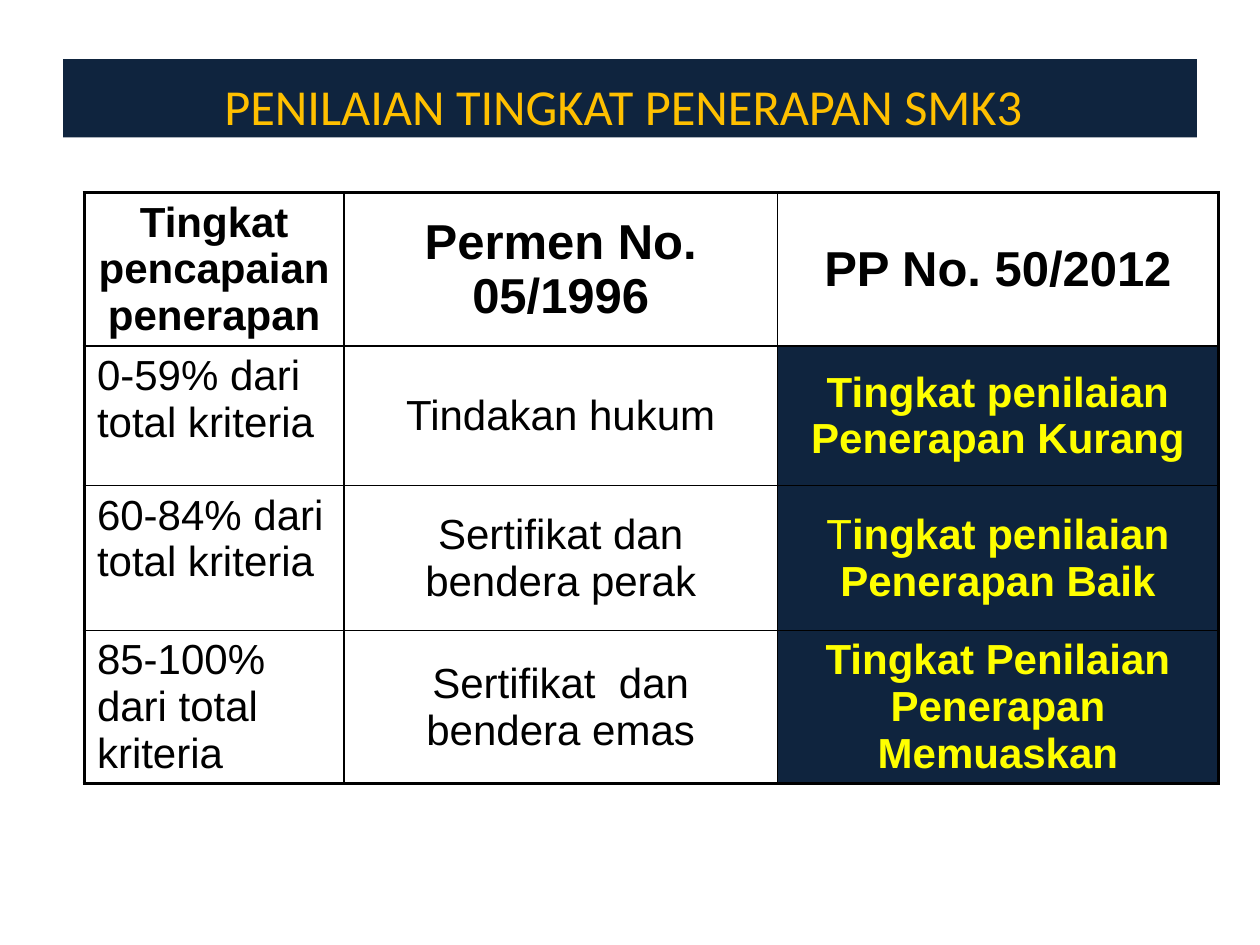
"""Build a slide that compares SMK3 assessment levels in two regulations."""
from lxml import etree
from pptx import Presentation
from pptx import util as u
from pptx.dml.color import RGBColor
from pptx.enum import text
from pptx.oxml import ns

NAVY = RGBColor(0x0F, 0x24, 0x3E)
GOLD = RGBColor(0xFF, 0xC0, 0x00)
YELLOW = RGBColor(0xFF, 0xFF, 0x00)
BLACK = RGBColor(0, 0, 0)
MID = text.MSO_ANCHOR.MIDDLE
CENTER = text.PP_ALIGN.CENTER


def add_run(para, words, size, color, bold=False, face="Arial"):
    run = para.add_run()
    run.text = words
    font = run.font
    font.name, font.size, font.bold = face, u.Pt(size), bold
    font.color.rgb = color


def add_edge(cell, side, width):
    line = etree.Element(ns.qn(f"a:{side}"), w=str(u.Pt(width)))
    fill = etree.SubElement(line, ns.qn("a:solidFill"))
    etree.SubElement(fill, ns.qn("a:srgbClr"), val=str(BLACK))
    cell._tc.get_or_add_tcPr().append(line)


deck = Presentation()
deck.slide_width, deck.slide_height = u.Inches(10), u.Inches(7.5)
slide = deck.slides.add_slide(deck.slide_layouts[5])

title = slide.shapes.title
title.left, title.top = u.Inches(0.5), u.Inches(0.47)
title.width, title.height = u.Inches(9), u.Inches(0.62)
title.fill.solid()
title.fill.fore_color.rgb = NAVY
frame = title.text_frame
frame.auto_size = text.MSO_AUTO_SIZE.NONE
frame.vertical_anchor = MID
frame.margin_top, frame.margin_bottom = u.Inches(0.07), 0
para = frame.paragraphs[0]
para.alignment = CENTER
add_run(para, "PENILAIAN TINGKAT PENERAPAN SMK3", 28.8, GOLD, face="Calibri")
add_run(para, " ", 32.4, GOLD, face="Calibri")

heads = [("Tingkat pencapaian penerapan", 24), ("Permen No. 05/1996", 28),
         ("PP No. 50/2012", 28)]
levels = [
    ("0-59% dari total kriteria", "Tindakan hukum",
     [("Tingkat penilaian Penerapan Kurang", True)]),
    ("60-84% dari total kriteria", "Sertifikat dan bendera perak",
     [("T", False), ("ingkat penilaian Penerapan Baik", True)]),
    ("85-100% dari total kriteria", "Sertifikat  dan bendera emas",
     [("Tingkat Penilaian Penerapan Memuaskan", True)]),
]
widths, heights = [2.06, 3.44, 3.5], [0.72, 1.11, 1.15, 1.11]
grid = slide.shapes.add_table(
    4, 3, u.Inches(0.67), u.Inches(1.53),
    u.Inches(sum(widths)), u.Inches(sum(heights))).table
for col, width in zip(grid.columns, widths):
    col.width = u.Inches(width)
for row, height in zip(grid.rows, heights):
    row.height = u.Inches(height)

for c, (words, size) in enumerate(heads):
    add_run(grid.cell(0, c).text_frame.paragraphs[0], words, size, BLACK, True)
for r, (score, old, new) in enumerate(levels, 1):
    for c, words in enumerate((score, old)):
        add_run(grid.cell(r, c).text_frame.paragraphs[0], words, 24, BLACK)
    for words, bold in new:
        add_run(grid.cell(r, 2).text_frame.paragraphs[0], words, 24, YELLOW, bold)

for r in range(4):
    for c in range(3):
        cell = grid.cell(r, c)
        if r == 0 or c > 0:
            cell.vertical_anchor = MID
            cell.text_frame.paragraphs[0].alignment = CENTER
        outer = {"lnL": c == 0, "lnR": c == 2, "lnT": r == 0, "lnB": r == 3}
        for side, thick in outer.items():
            add_edge(cell, side, 2.25 if thick else 1)
        if r and c == 2:
            cell.fill.solid()
            cell.fill.fore_color.rgb = NAVY
        else:
            cell.fill.background()

deck.save("out.pptx")
